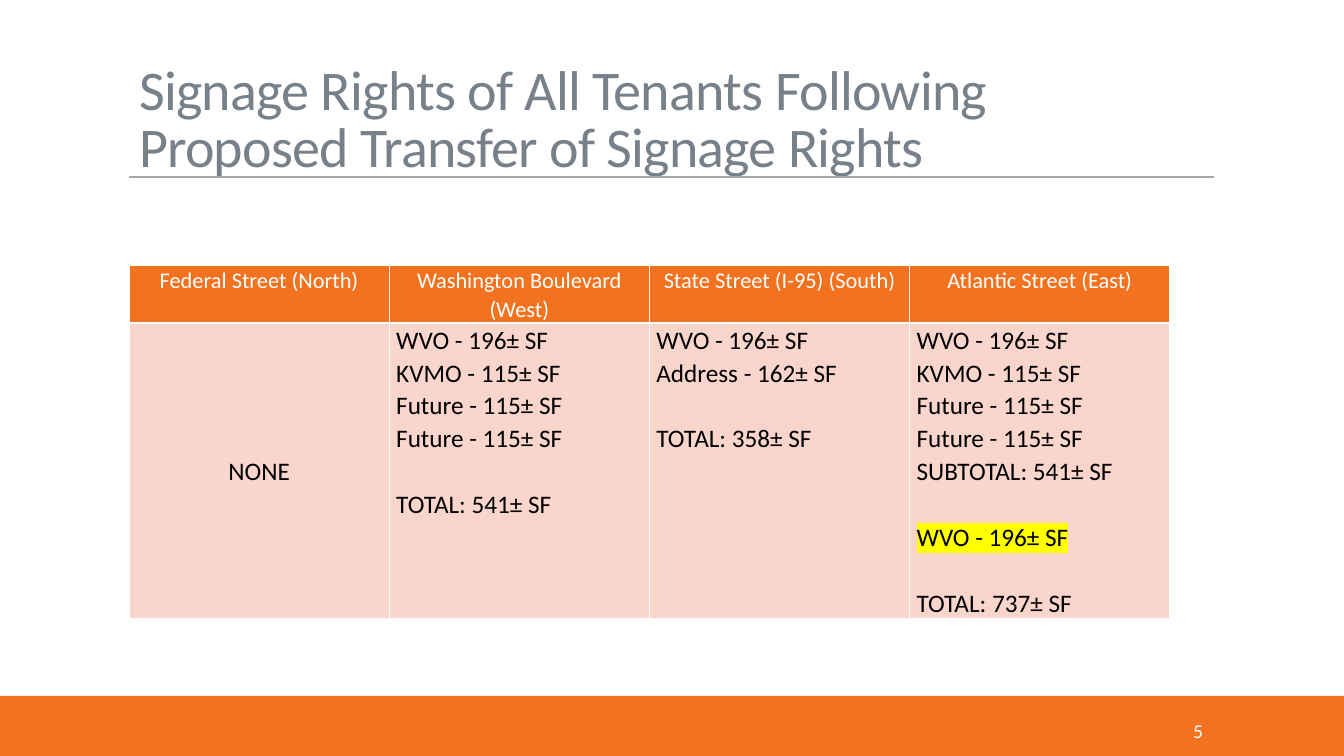
from lxml import etree
from pptx import Presentation
from pptx.dml.color import RGBColor
from pptx.enum.shapes import MSO_CONNECTOR, MSO_SHAPE
from pptx.enum.text import MSO_ANCHOR, MSO_AUTO_SIZE, PP_ALIGN
from pptx.oxml.ns import qn
from pptx.util import Pt

# Content: a row is (text, gap above, highlighted)
TITLE = "Signage Rights of All Tenants Following Proposed Transfer of Signage Rights"
NUMBER = "5"
MAIN = ("WVO - 196± SF", False, False)
SHARED = [
    MAIN,
    ("KVMO - 115± SF", False, False),
    ("Future - 115± SF", False, False),
    ("Future - 115± SF", False, False),
]
STREETS = [
    ("Federal Street (North)", [("NONE", False, False)]),
    ("Washington Boulevard (West)", SHARED + [("TOTAL: 541± SF", True, False)]),
    ("State Street (I-95) (South)", [
        MAIN,
        ("Address - 162± SF", False, False),
        ("TOTAL: 358± SF", True, False),
    ]),
    ("Atlantic Street (East)", SHARED + [
        ("SUBTOTAL: 541± SF", False, False),
        ("WVO - 196± SF", True, True),
        ("TOTAL: 737± SF", True, False),
    ]),
]

# Style
FONT = "Calibri"
ORANGE = RGBColor(0xF3, 0x72, 0x1F)
PINK = RGBColor(0xFA, 0xD5, 0xCC)
SLATE = RGBColor(0x78, 0x80, 0x8A)
GREY = RGBColor(0xA6, 0xA6, 0xA6)
WHITE = RGBColor(0xFF, 0xFF, 0xFF)
BLACK = RGBColor(0, 0, 0)
YELLOW = RGBColor(0xFF, 0xFF, 0)
CENTER, RIGHT, JUSTIFY = PP_ALIGN.CENTER, PP_ALIGN.RIGHT, PP_ALIGN.JUSTIFY
TOP, MIDDLE = MSO_ANCHOR.TOP, MSO_ANCHOR.MIDDLE

# Layout in px
WIDE, HIGH = 1344, 756
LEFT, SPAN = 129, 1041
HEAD, BODY = 58, 296
LINE_GAP = 23.5


def px(n):
    return round(n * 914400 / 100.8)


def box(*sides):
    return [px(n) for n in sides]


def style(para, size, color, align):
    para.alignment = align
    for run in para.runs:
        font = run.font
        font.name, font.size = FONT, Pt(size)
        font.color.rgb = color


def mark(run, color):
    fill = run.font._element.find(qn("a:solidFill"))
    light = etree.Element(qn("a:highlight"))
    etree.SubElement(light, qn("a:srgbClr"), val=str(color))
    fill.addnext(light)


def border(cell):
    props = cell._tc.get_or_add_tcPr()
    for i, side in enumerate("LRTB"):
        line = etree.Element(qn("a:ln" + side), w=str(Pt(1)))
        fill = etree.SubElement(line, qn("a:solidFill"))
        etree.SubElement(fill, qn("a:srgbClr"), val=str(WHITE))
        props.insert(i, line)


def fill_cell(cell, rows, size, color, back, align, anchor):
    cell.fill.solid()
    cell.fill.fore_color.rgb = back
    border(cell)
    cell.margin_left = cell.margin_right = px(7)
    cell.margin_top = cell.margin_bottom = 0
    cell.vertical_anchor = anchor
    frame = cell.text_frame
    frame.text = "\n".join(text for text, gap, lit in rows)
    for para, (text, gap, lit) in zip(frame.paragraphs, rows):
        para.line_spacing = 1.07
        if gap:
            para.space_before = Pt(LINE_GAP)
        style(para, size, color, align)
        if lit:
            mark(para.runs[0], YELLOW)


def main():
    deck = Presentation()
    deck.slide_width, deck.slide_height = px(WIDE), px(HIGH)
    slide = deck.slides.add_slide(deck.slide_layouts[5])
    shapes = slide.shapes

    # Footer band
    band = shapes.add_shape(MSO_SHAPE.RECTANGLE, *box(0, 696, WIDE, 60))
    band.shadow.inherit = False
    band.fill.solid()
    band.fill.fore_color.rgb = ORANGE
    band.line.fill.background()

    # Rule under the title
    rule = shapes.add_connector(MSO_CONNECTOR.STRAIGHT, *box(LEFT, 177, 1214, 177))
    rule.line.color.rgb = GREY
    rule.line.width = Pt(1)
    etree.SubElement(rule._element.spPr, qn("a:effectLst"))

    # Title
    title = shapes.title
    title.left, title.top, title.width, title.height = box(LEFT, 60, SPAN, 47)
    frame = title.text_frame
    frame.text = TITLE
    frame.word_wrap = True
    frame.auto_size = MSO_AUTO_SIZE.NONE
    frame.vertical_anchor = TOP
    para = frame.paragraphs[0]
    para.line_spacing = 0.85
    style(para, 40, SLATE, PP_ALIGN.LEFT)
    para.runs[0].font._element.set("spc", "-50")

    # Slide number
    note = shapes.add_textbox(*box(1069, 711, 144, 40)).text_frame
    note.word_wrap = True
    note.vertical_anchor = MIDDLE
    note.text = NUMBER
    style(note.paragraphs[0], 14, WHITE, RIGHT)

    # Signage table
    count = len(STREETS)
    table = shapes.add_table(2, count, *box(LEFT, 265, SPAN, HEAD + BODY)).table
    table.rows[0].height, table.rows[1].height = px(HEAD), px(BODY)
    for i, (street, rows) in enumerate(STREETS):
        table.columns[i].width = px(SPAN / count)
        fill_cell(table.cell(0, i), [(street, False, False)], 16, WHITE,
                  ORANGE, CENTER, TOP)
        align, anchor = (CENTER, MIDDLE) if len(rows) == 1 else (JUSTIFY, TOP)
        fill_cell(table.cell(1, i), rows, 18, BLACK, PINK, align, anchor)

    deck.save("out.pptx")


if __name__ == "__main__":
    main()
